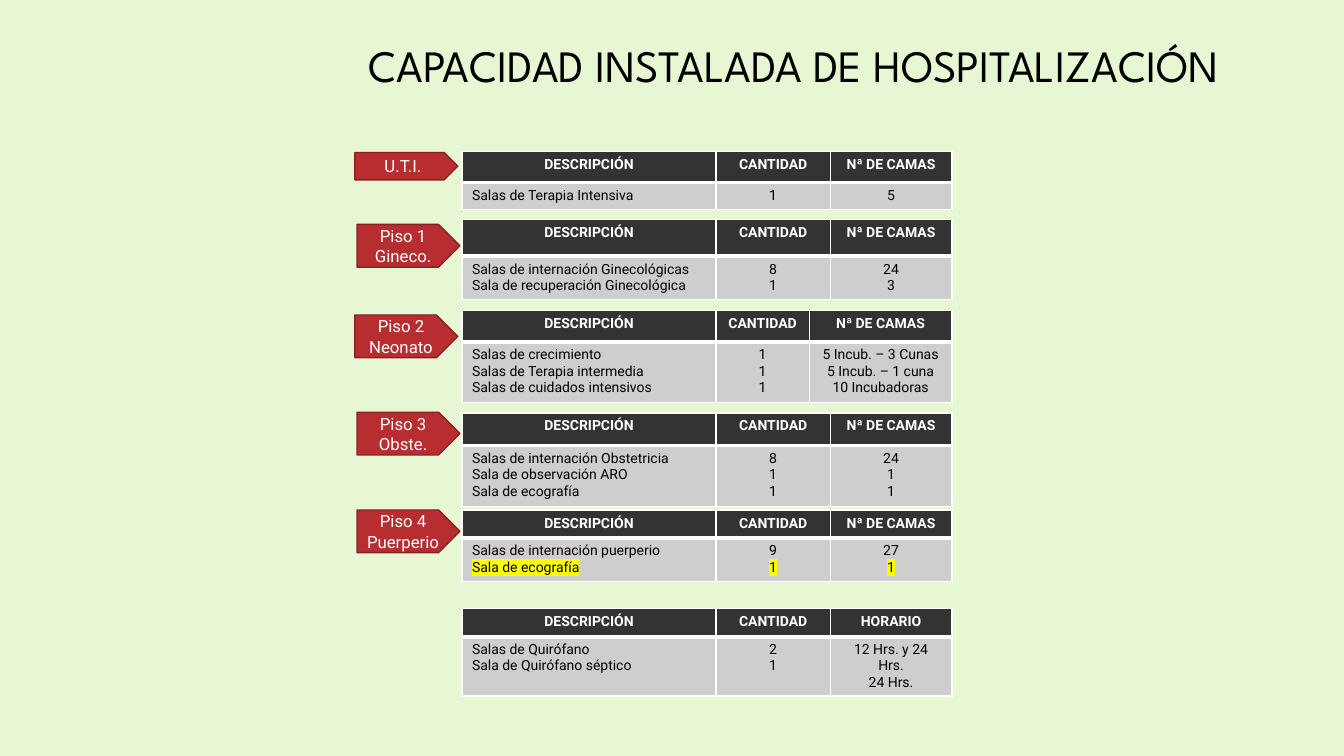
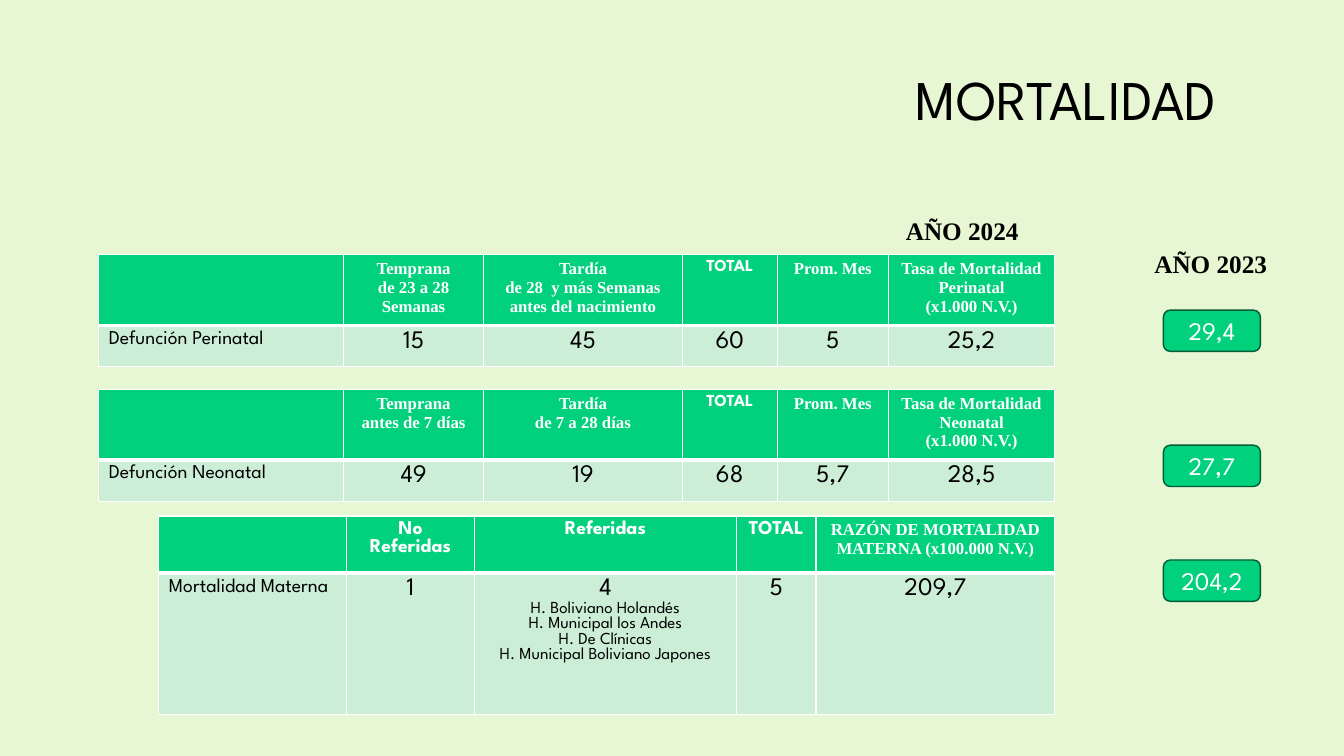
from dataclasses import dataclass, replace

from lxml import etree
from pptx import Presentation
from pptx.dml.color import RGBColor
from pptx.enum.shapes import MSO_SHAPE
from pptx.enum.text import MSO_ANCHOR, MSO_AUTO_SIZE, PP_ALIGN
from pptx.oxml.ns import qn
from pptx.util import Pt

LEFT, MID, RIGHT = PP_ALIGN.LEFT, PP_ALIGN.CENTER, PP_ALIGN.RIGHT
MIDDLE = MSO_ANCHOR.MIDDLE
ARROW, ROUND = MSO_SHAPE.PENTAGON, MSO_SHAPE.ROUNDED_RECTANGLE

# Colours
PALE, WHITE, BLACK, YELLOW = "E7F6D3", "FFFFFF", "000000", "FFFF00"
GREY = ("333333", "CECECE")
GREEN = ("01D17D", "CCEED7")
RED, WINE, PINE = "B82D2F", "882123", "005C37"


@dataclass(frozen=True)
class Style:
    font: str
    size: int
    color: str = BLACK
    bold: bool = False
    mark: str = ""


# Text styles
SPARTAN, ROBOTO, TIMES = "League Spartan", "Roboto", "Times New Roman"
ROOM = Style(ROBOTO, 10)
ROOM_HEAD = replace(ROOM, color=WHITE, bold=True)
ROOM_MARK = replace(ROOM, mark=YELLOW)
FLOOR = Style(ROBOTO, 12, WHITE)
HEAD = Style(TIMES, 12, WHITE, True)
TOTAL = Style(SPARTAN, 12, WHITE, True)
BIG_HEAD = replace(TOTAL, size=14)
NAME = Style(SPARTAN, 14)
VALUE = Style(SPARTAN, 18)
NOTE = Style(SPARTAN, 12)
RATE = Style(SPARTAN, 18, WHITE)
YEAR = Style(TIMES, 18, BLACK, True)


def rgb(code):
    return RGBColor.from_string(code)


def lines(text, style):
    """Pair each line of the text with its style."""
    return [(line, style) for line in text.split("\n")]


def mark(run, code):
    props = run.font._element
    light = etree.SubElement(props, qn("a:highlight"))
    etree.SubElement(light, qn("a:srgbClr"), val=code)


def write(frame, paras, align=MID):
    for i, (text, style) in enumerate(paras):
        para = frame.add_paragraph() if i else frame.paragraphs[0]
        para.text = text
        para.alignment = align
        font = para.font
        font.name, font.size, font.bold = style.font, Pt(style.size), style.bold
        font.color.rgb = rgb(style.color)
        if style.mark:
            mark(para.runs[0], style.mark)


def title(slide, text, size, box):
    shape = slide.shapes.title
    shape.left, shape.top, shape.width, shape.height = map(Pt, box)
    frame = shape.text_frame
    frame.auto_size = MSO_AUTO_SIZE.NONE
    frame.vertical_anchor = MIDDLE
    write(frame, lines(text, Style(SPARTAN, size)), RIGHT)
    frame.paragraphs[0].line_spacing = 0.9


def label(slide, kind, box, fill, edge, paras):
    shape = slide.shapes.add_shape(kind, *map(Pt, box))
    shape.shadow.inherit = False
    shape.fill.solid()
    shape.fill.fore_color.rgb = rgb(fill)
    shape.line.color.rgb = rgb(edge)
    shape.line.width = Pt(1)
    frame = shape.text_frame
    frame.word_wrap = False
    frame.vertical_anchor = MIDDLE
    write(frame, paras)


def caption(slide, text, left, top):
    box = slide.shapes.add_textbox(Pt(left), Pt(top), Pt(96.5), Pt(29))
    box.text_frame.word_wrap = True
    write(box.text_frame, lines(text, YEAR), LEFT)


def border(cell, is_head):
    props = cell._tc.get_or_add_tcPr()
    widths = {"L": 1, "R": 1, "T": 1 if is_head else 3, "B": 3 if is_head else 1}
    for side, width in widths.items():
        edge = etree.SubElement(props, qn("a:ln" + side), w=str(Pt(width)))
        fill = etree.SubElement(edge, qn("a:solidFill"))
        etree.SubElement(fill, qn("a:srgbClr"), val=WHITE)


def table(slide, left, top, widths, heights, fills, rows):
    """Add a head row and a body row; each cell is a list of styled lines."""
    frame = slide.shapes.add_table(
        len(rows), len(widths), Pt(left), Pt(top), Pt(sum(widths)), Pt(sum(heights)))
    grid = frame.table
    for col, width in zip(grid.columns, widths):
        col.width = Pt(width)
    for r, (cells, height, fill) in enumerate(zip(rows, heights, fills)):
        grid.rows[r].height = Pt(height)
        for c, paras in enumerate(cells):
            cell = grid.cell(r, c)
            border(cell, r == 0)
            cell.fill.solid()
            cell.fill.fore_color.rgb = rgb(fill)
            write(cell.text_frame, paras, LEFT if r and not c else MID)


def rooms(slide, top, heights, body, last="Nª DE CAMAS", widths=(181.5, 81.5, 87)):
    head = [lines(text, ROOM_HEAD) for text in ("DESCRIPCIÓN", "CANTIDAD", last)]
    table(slide, 330, top, widths, heights, GREY, [head, body])


def plain(*texts):
    return [lines(text, ROOM) for text in texts]


def capacity(slide):
    title(slide, "CAPACIDAD INSTALADA DE HOSPITALIZACIÓN", 32, (86.5, 22.5, 792, 52.5))

    # Rooms and beds by floor
    rooms(slide, 108, (22.3, 19.5), plain("Salas de Terapia Intensiva", "1", "5"))
    rooms(slide, 157, (26, 31), plain(
        "Salas de internación Ginecológicas\nSala de recuperación Ginecológica",
        "8\n1", "24\n3"))
    rooms(slide, 221.8, (22.3, 43.4), plain(
        "Salas de crecimiento\nSalas de Terapia intermedia\nSalas de cuidados intensivos",
        "1\n1\n1", "5 Incub. – 3 Cunas\n5 Incub. – 1 cuna\n10 Incubadoras"),
        widths=(181.5, 66.5, 102))
    rooms(slide, 295, (23.3, 43.4), plain(
        "Salas de internación Obstetricia\nSala de observación ARO\nSala de ecografía",
        "8\n1\n1", "24\n1\n1"))
    pairs = (("Salas de internación puerperio", "Sala de ecografía"),
             ("9", "1"), ("27", "1"))
    rooms(slide, 364.3, (20, 31), [[(a, ROOM), (b, ROOM_MARK)] for a, b in pairs])
    rooms(slide, 434.8, (20, 42.4), plain(
        "Salas de Quirófano\nSala de Quirófano séptico",
        "2\n1", "12 Hrs. y 24 Hrs.\n24 Hrs."), last="HORARIO")

    # Floor labels
    floors = ((253.5, 109, 19.5, "U.T.I."),
              (255, 160.3, 30.5, "Piso 1\nGineco."),
              (253.5, 225, 30.5, "Piso 2\nNeonato"),
              (255, 294.5, 30.5, "Piso 3\nObste."),
              (255, 364.3, 30.5, "Piso 4\nPuerperio"))
    for left, top, height, text in floors:
        label(slide, ARROW, (left, top, 73.5, height), RED, WINE, lines(text, FLOOR))


def deaths(slide, top, early, late, rate, name, values):
    head = [lines(text, HEAD) for text in ("", early, late, "Prom. Mes", rate)]
    head.insert(3, lines("TOTAL", TOTAL))
    body = [lines(name, NAME)] + [lines(value, VALUE) for value in values]
    table(slide, 70.5, top, (175, 100, 142, 67.7, 79.5, 118.8), (50.4, 29.5),
          GREEN, [head, body])


def mortality(slide):
    title(slide, "MORTALIDAD", 40, (84.2, 33, 792, 80))

    # Perinatal, neonatal and maternal deaths
    deaths(slide, 182, "Temprana\nde 23 a 28\nSemanas",
           "Tardía\nde 28  y más Semanas antes del nacimiento",
           "Tasa de Mortalidad Perinatal\n(x1.000 N.V.)",
           "Defunción Perinatal", ("15", "45", "60", "5", "25,2"))
    deaths(slide, 278.2, "Temprana\nantes de 7 días", "Tardía\nde 7 a 28 días",
           "Tasa de Mortalidad Neonatal\n(x1.000 N.V.)",
           "Defunción Neonatal", ("49", "19", "68", "5,7", "28,5"))
    head = [lines(text, BIG_HEAD) for text in ("", "No Referidas", "Referidas", "TOTAL")]
    head.append(lines("RAZÓN DE MORTALIDAD MATERNA (x100.000 N.V.)", HEAD))
    body = [lines("Mortalidad Materna", NAME)]
    body += [lines(value, VALUE) for value in ("1", "4", "5", "209,7")]
    body[2] += lines("H. Boliviano Holandés\nH. Municipal los Andes\n"
                     "H. De Clínicas\nH. Municipal Boliviano Japones", NOTE)
    table(slide, 113.5, 368.5, (134, 91.5, 187, 57, 170.5), (41, 101),
          GREEN, [head, body])

    # Years and rates of the year before
    caption(slide, "AÑO 2024", 640, 150.5)
    caption(slide, "AÑO 2023", 817.5, 173.5)
    for top, rate in ((221.5, "29,4"), (318, "27,7"), (400, "204,2")):
        label(slide, ROUND, (831, top, 69.3, 29.5), GREEN[0], PINE, lines(rate, RATE))


def main():
    deck = Presentation()
    deck.slide_width, deck.slide_height = Pt(960), Pt(540)
    back = deck.slide_master.background.fill
    back.solid()
    back.fore_color.rgb = rgb(PALE)
    for build in (capacity, mortality):
        build(deck.slides.add_slide(deck.slide_layouts[5]))
    deck.save("out.pptx")


if __name__ == "__main__":
    main()
